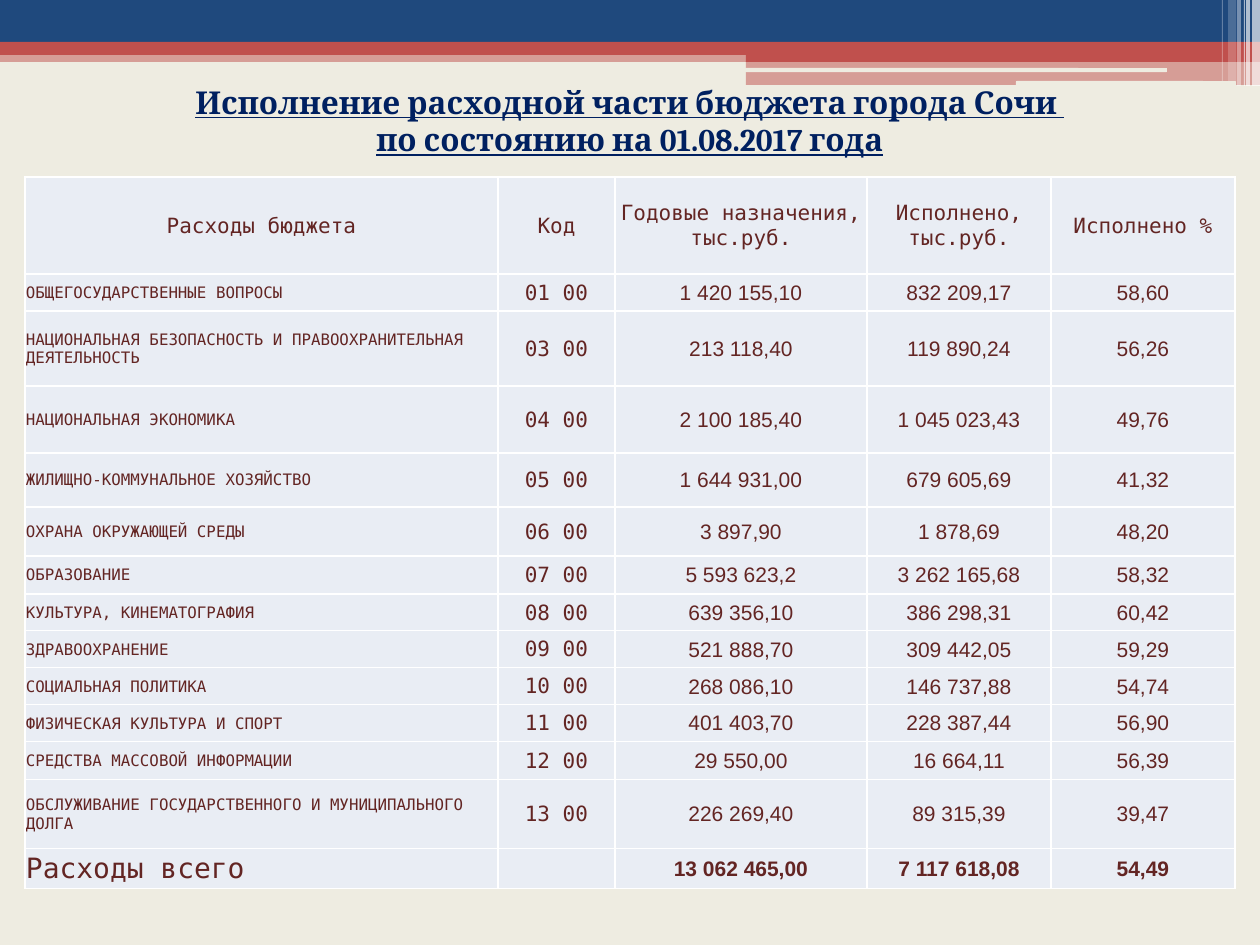
import pptx
import pptx.util
import pptx.dml.color
import pptx.enum.shapes
import pptx.enum.text
import pptx.oxml.ns
from lxml import etree

SCALE = 914400 / 126
KIND = pptx.enum.shapes.MSO_SHAPE
ALIGN = pptx.enum.text.PP_ALIGN
MID = pptx.enum.text.MSO_ANCHOR.MIDDLE

NAVY, RED, CREAM, WHITE = "1F497D", "C0504D", "EEECE1", "FFFFFF"
BROWN, PALE, INK = "632523", "E9EDF4", "002060"

# Text formats
MONO = {"name": "DejaVu Sans Mono", "size": 12, "color": BROWN}
NAME = {**MONO, "size": 9}
SUM = {**MONO, "size": 16}
NUM = {**MONO, "name": "Arial"}
BOLD = {**NUM, "bold": True}
TITLE = {"name": "Cambria", "size": 18, "color": INK, "bold": True, "underline": True}

# Header bands: left, top, width, height, colour, opacity in percent
BANDS = [
    (0, 50, 1260, 12, RED, 50),
    (0, 0, 1260, 42, NAVY, 100),
    (0, 42, 1260, 13, RED, 100),
    (746, 49, 514, 13, RED, 100),
    (746, 61, 514, 24, RED, 50),
]
BARS = [(745, 68, 422, 4, CREAM, 100), (1016, 81, 220, 5, CREAM, 100)]
# Vertical stripes: left, width, height, opacity
STRIPES = [(1252, 8, 86, 65), (1246, 4, 86, 65), (1244, 1, 86, 60),
           (1237, 4, 86, 40), (1228, 8, 81, 20), (1222, 1, 81, 30)]

HEADS = ["Расходы бюджета", "Код", "Годовые назначения, тыс.руб.",
         "Исполнено, тыс.руб.", "Исполнено %"]
COSTS = [
    ["ОБЩЕГОСУДАРСТВЕННЫЕ ВОПРОСЫ", "01 00", "1 420 155,10", "832 209,17", "58,60"],
    ["НАЦИОНАЛЬНАЯ БЕЗОПАСНОСТЬ И ПРАВООХРАНИТЕЛЬНАЯ ДЕЯТЕЛЬНОСТЬ",
     "03 00", "213 118,40", "119 890,24", "56,26"],
    ["НАЦИОНАЛЬНАЯ ЭКОНОМИКА", "04 00", "2 100 185,40", "1 045 023,43", "49,76"],
    ["ЖИЛИЩНО-КОММУНАЛЬНОЕ ХОЗЯЙСТВО", "05 00", "1 644 931,00", "679 605,69", "41,32"],
    ["ОХРАНА ОКРУЖАЮЩЕЙ СРЕДЫ", "06 00", "3 897,90", "1 878,69", "48,20"],
    ["ОБРАЗОВАНИЕ", "07 00", "5 593 623,2", "3 262 165,68", "58,32"],
    ["КУЛЬТУРА, КИНЕМАТОГРАФИЯ", "08 00", "639 356,10", "386 298,31", "60,42"],
    ["ЗДРАВООХРАНЕНИЕ", "09 00", "521 888,70", "309 442,05", "59,29"],
    ["СОЦИАЛЬНАЯ ПОЛИТИКА", "10 00", "268 086,10", "146 737,88", "54,74"],
    ["ФИЗИЧЕСКАЯ КУЛЬТУРА И СПОРТ", "11 00", "401 403,70", "228 387,44", "56,90"],
    ["СРЕДСТВА МАССОВОЙ ИНФОРМАЦИИ", "12 00", "29 550,00", "16 664,11", "56,39"],
    ["ОБСЛУЖИВАНИЕ ГОСУДАРСТВЕННОГО И МУНИЦИПАЛЬНОГО ДОЛГА",
     "13 00", "226 269,40", "89 315,39", "39,47"],
]
TOTAL = ["Расходы всего", "", "13 062 465,00", "7 117 618,08", "54,49"]
WIDTHS = [473, 117, 252, 184, 184]
HEIGHTS = [97, 37, 75, 67, 54, 49, 38, 37, 37, 37, 37, 38, 69, 40]


def px(num):
    return pptx.util.Emu(round(num * SCALE))


def rgb(code):
    return pptx.dml.color.RGBColor.from_string(code)


def node(base, tag, **attrs):
    return etree.SubElement(base, pptx.oxml.ns.qn(tag), **attrs)


def paint(fill, code):
    fill.solid()
    fill.fore_color.rgb = rgb(code)


def style(font, look):
    for key, val in look.items():
        if key == "color":
            font.color.rgb = rgb(val)
        else:
            setattr(font, key, pptx.util.Pt(val) if key == "size" else val)


def write(para, text, look, align):
    para.alignment = align
    if text:
        run = para.add_run()
        run.text = text
        style(run.font, look)


def band(slide, left, top, wide, high, code, alpha, kind=KIND.RECTANGLE):
    shape = slide.shapes.add_shape(kind, px(left), px(top), px(wide), px(high))
    shape.shadow.inherit = False
    shape.line.fill.background()
    paint(shape.fill, code)
    if alpha < 100:
        tint = shape.element.spPr.find(".//" + pptx.oxml.ns.qn("a:srgbClr"))
        node(tint, "a:alpha", val=str(alpha * 1000))


def title(slide, lines):
    box = slide.shapes.title
    place = {"left": 25, "top": 76, "width": 1210, "height": 89}
    for key, val in place.items():
        setattr(box, key, px(val))
    frame = box.text_frame
    frame.auto_size = pptx.enum.text.MSO_AUTO_SIZE.NONE
    frame.vertical_anchor = MID
    for num, line in enumerate(lines):
        para = frame.add_paragraph() if num else frame.paragraphs[0]
        write(para, line, TITLE, ALIGN.CENTER)
    # Bring the title in front of the bands
    box.element.getparent().append(box.element)


def edge(cell):
    props = cell._tc.get_or_add_tcPr()
    for side in ("a:lnL", "a:lnR", "a:lnT", "a:lnB"):
        line = node(props, side, w="12700")
        node(node(line, "a:solidFill"), "a:srgbClr", val=WHITE)


def fill_cell(cell, text, look, align):
    inset = {"margin_left": 1, "margin_right": 1, "margin_top": 1, "margin_bottom": 0}
    for key, val in inset.items():
        setattr(cell, key, px(val))
    cell.vertical_anchor = MID
    edge(cell)
    paint(cell.fill, PALE)
    write(cell.text_frame.paragraphs[0], text, look, align)


def table(slide):
    rows = [(HEADS, [MONO] * 5)]
    rows += [(cost, [NAME, MONO, NUM, NUM, NUM]) for cost in COSTS]
    rows.append((TOTAL, [SUM, MONO, BOLD, BOLD, BOLD]))
    grid = slide.shapes.add_table(len(rows), len(WIDTHS), px(25), px(177),
                                  px(sum(WIDTHS)), px(sum(HEIGHTS))).table
    grid.first_row = grid.horz_banding = False
    for col, wide in zip(grid.columns, WIDTHS):
        col.width = px(wide)
    for num, (texts, looks) in enumerate(rows):
        grid.rows[num].height = px(HEIGHTS[num])
        for pos, (text, look) in enumerate(zip(texts, looks)):
            align = ALIGN.LEFT if num and not pos else ALIGN.CENTER
            fill_cell(grid.cell(num, pos), text, look, align)


def main():
    deck = pptx.Presentation()
    deck.slide_width, deck.slide_height = px(1260), px(945)
    slide = deck.slides.add_slide(deck.slide_layouts[5])
    paint(slide.background.fill, CREAM)

    # Header decoration
    for item in BANDS:
        band(slide, *item)
    for item in BARS:
        band(slide, *item, kind=KIND.ROUNDED_RECTANGLE)
    for left, wide, high, alpha in STRIPES:
        band(slide, left, 0, wide, high, WHITE, alpha)

    # Budget table and title
    table(slide)
    title(slide, ["Исполнение расходной части бюджета города Сочи ",
                  "по состоянию на 01.08.2017 года"])
    deck.save("out.pptx")


if __name__ == "__main__":
    main()
